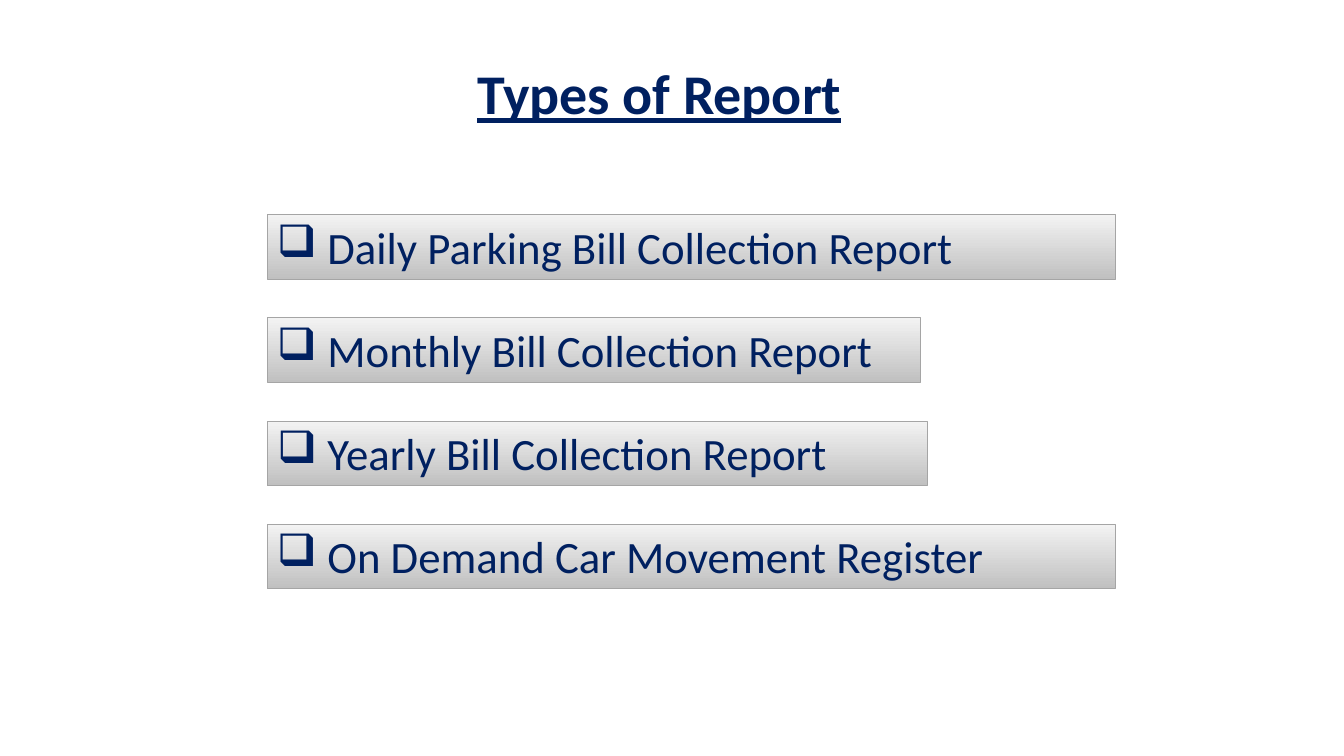
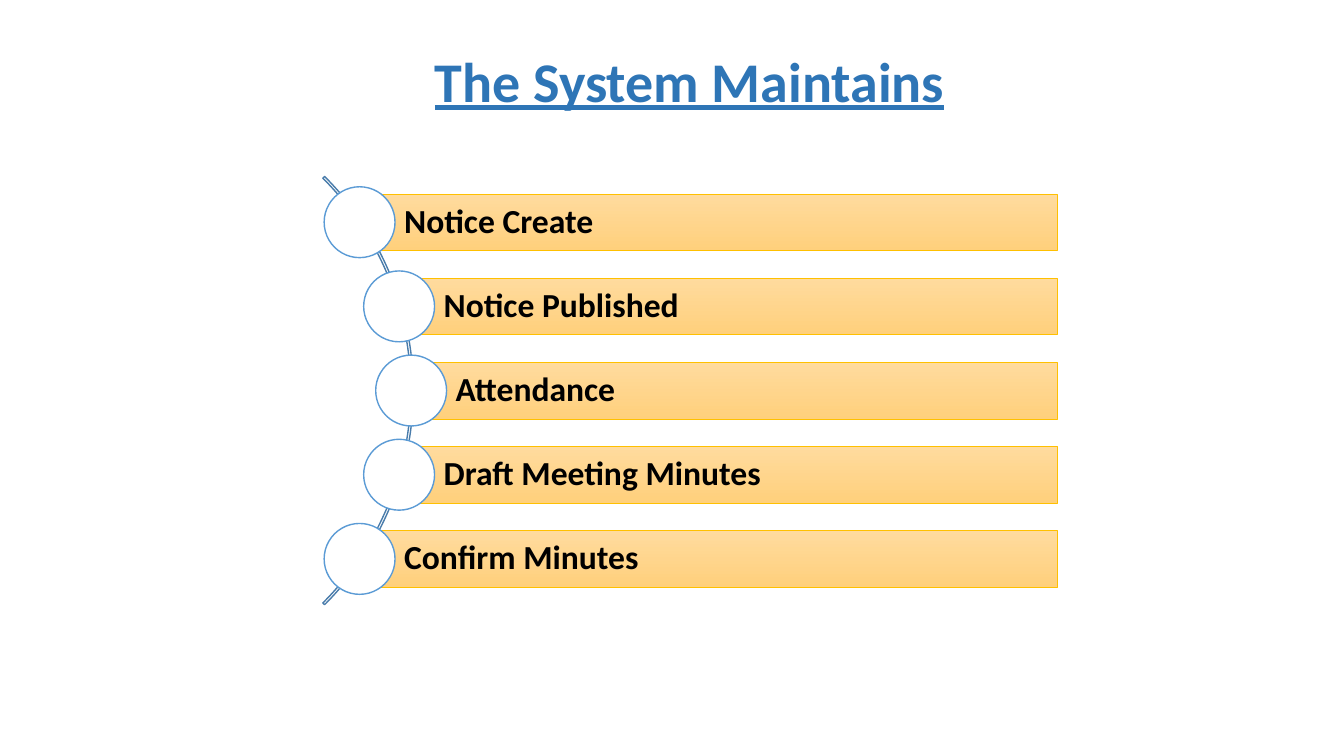
import math
from lxml import etree
from pptx import Presentation
from pptx import util as u
from pptx.dml.color import RGBColor
from pptx.enum import shapes, text
from pptx.oxml import ns

COLORS = {
    "navy": "002060", "blue": "2E75B6", "black": "000000", "white": "FFFFFF",
    "silver": "F3F3F3", "gray": "C0C0C0", "gray line": "A5A5A5",
    "cream": "FFDB9E", "amber": "FFD07C", "gold line": "FFC000",
    "arc line": "497CAB", "circle line": "5B9BD5",
}
FONT = "Calibri"
COLUMNS = 160

presentation = Presentation()
presentation.slide_width = u.Emu(12192000)
presentation.slide_height = u.Emu(6858000)
cell = presentation.slide_width / COLUMNS


def add_shape(slide, preset, place, fill, line, weight):
    shape = slide.shapes.add_shape(preset, *[u.Emu(round(cell * n)) for n in place])
    shape.shadow.inherit = False
    if len(fill) == 2:
        shape.fill.gradient()
        shape.fill.gradient_angle = 270
        for stop, position, name in zip(shape.fill.gradient_stops, (0, 1), fill):
            stop.position = position
            stop.color.rgb = RGBColor.from_string(COLORS[name])
    elif fill:
        shape.fill.solid()
        shape.fill.fore_color.rgb = RGBColor.from_string(COLORS[fill[0]])
    else:
        shape.fill.background()
    shape.line.color.rgb = RGBColor.from_string(COLORS[line])
    shape.line.width = u.Pt(weight)
    return shape


def write(shape, words, size, color, bold=False, underline=False, align="LEFT",
          anchor="TOP", bullet=None, spacing=1.0, left_inset=1.2):
    frame = shape.text_frame
    frame.word_wrap = True
    frame.vertical_anchor = text.MSO_ANCHOR[anchor]
    frame.margin_left = u.Emu(round(cell * left_inset))
    paragraph = frame.paragraphs[0]
    paragraph.text = words
    paragraph.alignment = text.PP_ALIGN[align]
    paragraph.line_spacing = spacing
    if bullet:
        properties = paragraph._p.get_or_add_pPr()
        properties.set("marL", str(u.Inches(0.5)))
        properties.set("indent", str(-u.Inches(0.5)))
        etree.SubElement(properties, ns.qn("a:buChar")).set("char", bullet)
    font = paragraph.font
    font.name, font.size = FONT, u.Pt(size)
    font.bold, font.underline = bold, underline
    font.color.rgb = RGBColor.from_string(COLORS[color])


slides = []
for words, color, left, top, width in [
    ("Types of Report", "navy", 51.1, 6.4, 54.8),
    ("The System Maintains", "blue", 46.6, 4.9, 71),
]:
    slide = presentation.slides.add_slide(presentation.slide_layouts[6])
    title = slide.shapes.add_textbox(*[u.Emu(round(cell * n)) for n in (left, top, width, 9.2)])
    write(title, words, 40, color, bold=True, underline=True, align="CENTER")
    slides.append(slide)
report_slide, system_slide = slides

RECTANGLE = shapes.MSO_SHAPE.RECTANGLE
reports = [
    ("Daily Parking Bill Collection Report", 101),
    ("Monthly Bill Collection Report", 77.8),
    ("Yearly Bill Collection Report", 78.6),
    ("On Demand Car Movement Register", 101),
]
for row, (words, width) in enumerate(reports):
    bar = add_shape(report_slide, RECTANGLE, (31.8, 25.55 + 12.28 * row, width, 7.7),
                    ("silver", "gray"), "gray line", 0.5)
    write(bar, words, 32, "navy", bullet="❑")

center_x, center_y, diameter = 13.15, 46.5, 72.1
arc = add_shape(system_slide, shapes.MSO_SHAPE.BLOCK_ARC,
                (center_x - diameter / 2, center_y - diameter / 2, diameter, diameter),
                (), "arc line", 1)
for index, value in enumerate((189, 27, 0.004)):
    arc.adjustments[index] = value

steps = ["Notice Create", "Notice Published", "Attendance",
         "Draft Meeting Minutes", "Confirm Minutes"]
pitch, path_radius, bar_right, bar_height, circle = 10.02, 35.8, 125.85, 6.75, 8.44
for row, words in enumerate(steps):
    offset = pitch * (row - (len(steps) - 1) / 2)
    left = center_x + math.sqrt(path_radius ** 2 - offset ** 2)
    middle = center_y + offset
    bar = add_shape(system_slide, RECTANGLE,
                    (left, middle - bar_height / 2, bar_right - left, bar_height),
                    ("cream", "amber"), "gold line", 0.5)
    write(bar, words, 24, "black", bold=True, anchor="MIDDLE", spacing=0.9, left_inset=5.3)
    add_shape(system_slide, shapes.MSO_SHAPE.OVAL,
              (left - circle / 2, middle - circle / 2, circle, circle),
              ("white",), "circle line", 1)

presentation.save("out.pptx")
